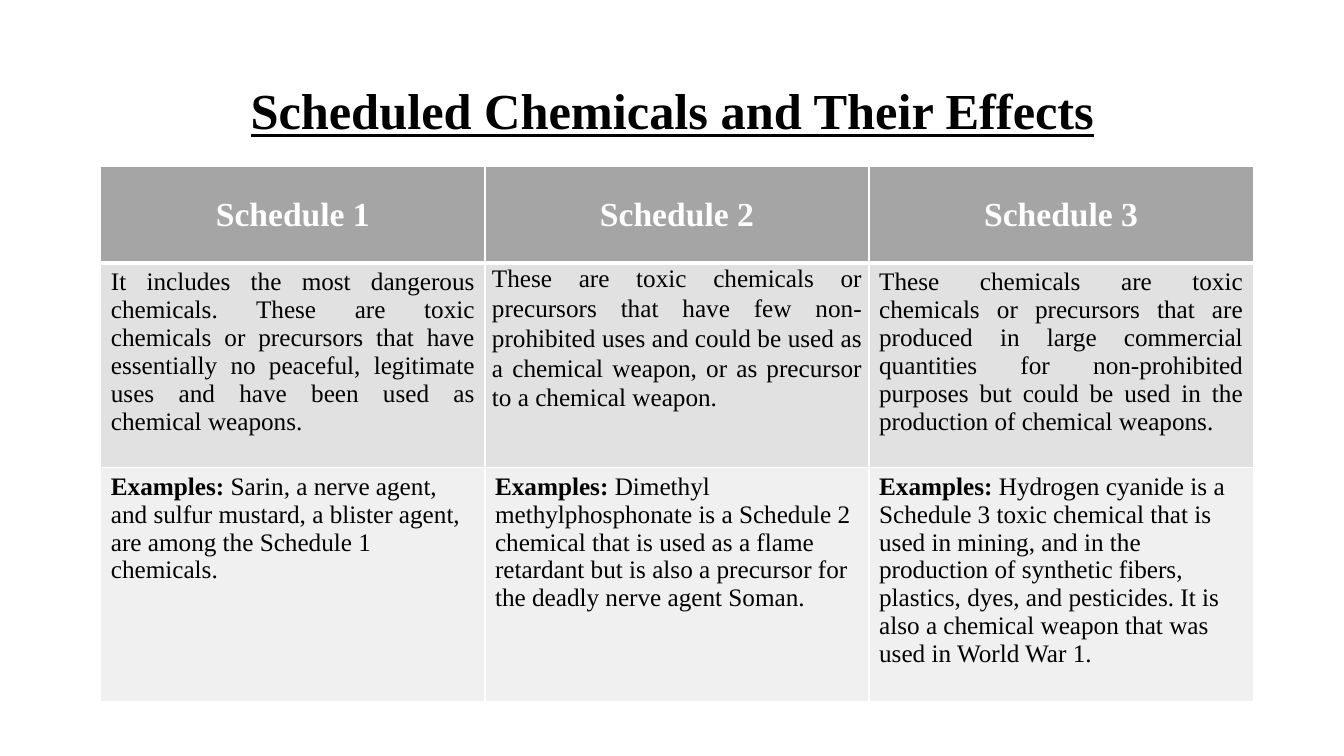
from dataclasses import dataclass

from lxml import etree
from pptx import Presentation
from pptx.dml.color import RGBColor
from pptx.enum.text import MSO_ANCHOR, PP_ALIGN
from pptx.oxml.ns import qn
from pptx.table import _Cell
from pptx.util import Inches, Pt

CENTER, JUSTIFY, LEFT = PP_ALIGN.CENTER, PP_ALIGN.JUSTIFY, PP_ALIGN.LEFT
MIDDLE, TOP = MSO_ANCHOR.MIDDLE, MSO_ANCHOR.TOP
FONT = "Times New Roman"
BLACK, WHITE = "000000", "FFFFFF"
COLUMN_WIDTH = 3.81


@dataclass(frozen=True)
class Schedule:
    name: str
    description: str
    examples: str


@dataclass(frozen=True)
class RowStyle:
    height: float
    fill: str
    color: str
    size: int
    align: PP_ALIGN
    anchor: MSO_ANCHOR
    top_border: int
    bottom_border: int


SCHEDULES = [
    Schedule(
        "Schedule 1",
        "It includes the most dangerous chemicals. These are toxic chemicals or "
        "precursors that have essentially no peaceful, legitimate uses and have "
        "been used as chemical weapons.",
        "Sarin, a nerve agent, and sulfur mustard, a blister agent, are among the "
        "Schedule 1 chemicals.",
    ),
    Schedule(
        "Schedule 2",
        "These are toxic chemicals or precursors that have few non-prohibited uses "
        "and could be used as a chemical weapon, or as precursor to a chemical weapon.",
        "Dimethyl methylphosphonate is a Schedule 2 chemical that is used as a flame "
        "retardant but is also a precursor for the deadly nerve agent Soman.",
    ),
    Schedule(
        "Schedule 3",
        "These chemicals are toxic chemicals or precursors that are produced in large "
        "commercial quantities for non-prohibited purposes but could be used in the "
        "production of chemical weapons.",
        "Hydrogen cyanide is a Schedule 3 toxic chemical that is used in mining, and "
        "in the production of synthetic fibers, plastics, dyes, and pesticides. It is "
        "also a chemical weapon that was used in World War 1.",
    ),
]
ROW_STYLES = [
    RowStyle(0.96, "A5A5A5", WHITE, 24, CENTER, MIDDLE, 1, 3),
    RowStyle(2.03, "E1E1E1", BLACK, 18, JUSTIFY, TOP, 3, 1),
    RowStyle(2.32, "F0F0F0", BLACK, 18, LEFT, TOP, 1, 1),
]


def rgb(color: str) -> RGBColor:
    return RGBColor.from_string(color)


def set_borders(cell: _Cell, top: int, bottom: int) -> None:
    """Draw white cell borders; the schema wants them before the fill."""
    properties = cell._tc.get_or_add_tcPr()
    widths = {"a:lnL": 1, "a:lnR": 1, "a:lnT": top, "a:lnB": bottom}
    for position, (tag, width) in enumerate(widths.items()):
        line = etree.Element(qn(tag), w=str(Pt(width)))
        fill = etree.SubElement(line, qn("a:solidFill"))
        etree.SubElement(fill, qn("a:srgbClr"), val=WHITE)
        properties.insert(position, line)


def fill_cell(cell: _Cell, runs: list[tuple[str, bool]], style: RowStyle) -> None:
    """Write (text, bold) runs and format the cell."""
    cell.fill.solid()
    cell.fill.fore_color.rgb = rgb(style.fill)
    set_borders(cell, style.top_border, style.bottom_border)
    cell.vertical_anchor = style.anchor
    paragraph = cell.text_frame.paragraphs[0]
    paragraph.alignment = style.align
    paragraph.font.name = FONT
    paragraph.font.size = Pt(style.size)
    paragraph.font.color.rgb = rgb(style.color)
    for text, bold in runs:
        run = paragraph.add_run()
        run.text = text
        run.font.bold = bold


def main() -> None:
    prs = Presentation()
    prs.slide_width, prs.slide_height = Inches(13.33), Inches(7.5)
    slide = prs.slides.add_slide(prs.slide_layouts[5])

    title = slide.shapes.title
    title.left, title.top = Inches(0.92), Inches(0.4)
    title.width, title.height = Inches(11.5), Inches(1.45)
    title.text_frame.text = "Scheduled Chemicals and Their Effects"
    title.text_frame.vertical_anchor = MIDDLE
    heading = title.text_frame.paragraphs[0]
    heading.alignment = CENTER
    heading.line_spacing = 0.9
    heading.font.name = FONT
    heading.font.size = Pt(36)
    heading.font.bold = True
    heading.font.underline = True
    heading.font.color.rgb = rgb(BLACK)

    table = slide.shapes.add_table(
        len(ROW_STYLES), len(SCHEDULES), Inches(1), Inches(1.65),
        Inches(COLUMN_WIDTH * len(SCHEDULES)),
        Inches(sum(style.height for style in ROW_STYLES)),
    ).table
    for row, style in zip(table.rows, ROW_STYLES):
        row.height = Inches(style.height)
    for column, schedule in enumerate(SCHEDULES):
        table.columns[column].width = Inches(COLUMN_WIDTH)
        contents = [
            [(schedule.name, True)],
            [(schedule.description, False)],
            [("Examples: ", True), (schedule.examples, False)],
        ]
        for row, (runs, style) in enumerate(zip(contents, ROW_STYLES)):
            fill_cell(table.cell(row, column), runs, style)

    schedule_2_description = table.cell(1, 1)
    schedule_2_description.margin_left = schedule_2_description.margin_right = Inches(0.07)
    schedule_2_description.margin_top = schedule_2_description.margin_bottom = 0
    schedule_2_description.text_frame.paragraphs[0].line_spacing = 1.07

    prs.save("out.pptx")


if __name__ == "__main__":
    main()
